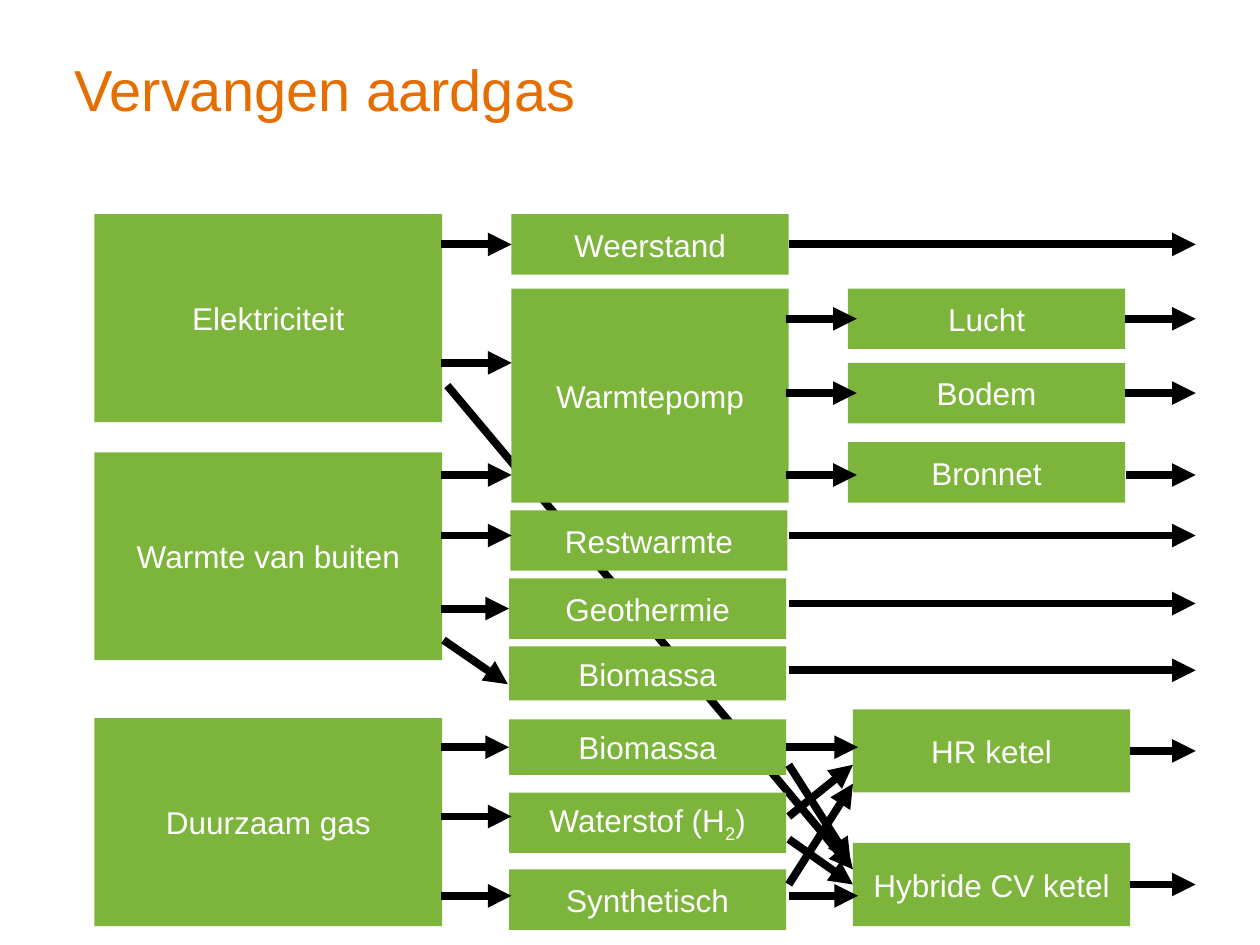
from dataclasses import dataclass

from lxml.etree import SubElement
from pptx import Presentation
from pptx.dml.color import RGBColor
from pptx.enum.shapes import MSO_CONNECTOR as Connector, MSO_SHAPE as Shape
from pptx.enum.text import MSO_ANCHOR as Anchor, MSO_AUTO_SIZE as AutoSize, PP_ALIGN as Align
from pptx.oxml.ns import qn
from pptx.util import Inches, Pt


@dataclass(frozen=True)
class Theme:
    font: str = "Arial"
    title_size: float = 33
    title_spacing: float = 28
    box_size: float = 18
    line_width: float = 4.5
    title: RGBColor = RGBColor(0xE6, 0x6E, 0x00)
    box: RGBColor = RGBColor(0x7D, 0xB4, 0x3C)
    box_text: RGBColor = RGBColor(0xFF, 0xFF, 0xFF)
    line: RGBColor = RGBColor(0x00, 0x00, 0x00)


class Diagram:
    def __init__(self, slide, theme):
        self.slide = slide
        self.theme = theme

    def run(self, paragraph, text, size, color):
        run = paragraph.add_run()
        run.text = text
        run.font.name = self.theme.font
        run.font.size = Pt(size)
        run.font.color.rgb = color
        return run

    def title(self, text, left, top, width, height):
        shape = self.slide.shapes.title
        shape.left, shape.top = Inches(left), Inches(top)
        shape.width, shape.height = Inches(width), Inches(height)
        frame = shape.text_frame
        frame.margin_left = frame.margin_right = frame.margin_top = frame.margin_bottom = 0
        frame.auto_size = AutoSize.NONE
        frame.vertical_anchor = Anchor.TOP
        paragraph = frame.paragraphs[0]
        paragraph.alignment = Align.LEFT
        paragraph.line_spacing = Pt(self.theme.title_spacing)
        self.run(paragraph, text, self.theme.title_size, self.theme.title)

    def box(self, parts, left, top, width, height):
        shape = self.slide.shapes.add_shape(
            Shape.RECTANGLE, Inches(left), Inches(top), Inches(width), Inches(height))
        shape.shadow.inherit = False
        shape.fill.solid()
        shape.fill.fore_color.rgb = self.theme.box
        shape.line.fill.background()
        frame = shape.text_frame
        frame.word_wrap = True
        frame.vertical_anchor = Anchor.MIDDLE
        paragraph = frame.paragraphs[0]
        paragraph.alignment = Align.CENTER
        for index, text in enumerate(parts):
            run = self.run(paragraph, text, self.theme.box_size, self.theme.box_text)
            if index % 2:
                run.font._element.set("baseline", "-25000")
        return shape

    def arrow(self, x1, y1, x2, y2, source=None, target=None):
        connector = self.slide.shapes.add_connector(
            Connector.STRAIGHT, Inches(x1), Inches(y1), Inches(x2), Inches(y2))
        connector.line.color.rgb = self.theme.line
        connector.line.width = Pt(self.theme.line_width)
        SubElement(connector.line._get_or_add_ln(), qn("a:tailEnd"), type="triangle")
        SubElement(connector._element.spPr, qn("a:effectLst"))
        if source is not None:
            connector.begin_connect(source, 3)
        if target is not None:
            connector.end_connect(target, 1)


SOURCES = [("Elektriciteit", 1.7), ("Warmte van buiten", 3.59), ("Duurzaam gas", 5.7)]
SOURCE_LEFT, SOURCE_WIDTH, SOURCE_HEIGHT = 0.75, 2.76, 1.65
BOX_WIDTH, BOX_HEIGHT = 2.2, 0.48
SOURCE_EDGE, TECHNIQUE_LEFT, TECHNIQUE_EDGE = 3.5, 4.06, 6.26
HEAT_EDGE, HEAT_TIP, DEVICE_EDGE, OUTPUT_TIP = 6.24, 6.8, 8.94, 9.49
BOILER_LEFT, BOILER_TIP = 6.77, 6.81

BOXES = {
    "resistance": (["Weerstand"], 4.06, 1.7, BOX_HEIGHT),
    "heat pump": (["Warmtepomp"], 4.06, 2.29, 1.7),
    "residual": (["Restwarmte"], 4.05, 4.05, BOX_HEIGHT),
    "geothermal": (["Geothermie"], 4.04, 4.59, BOX_HEIGHT),
    "biomass heat": (["Biomassa"], 4.04, 5.13, 0.43),
    "biomass gas": (["Biomassa"], 4.04, 5.71, 0.44),
    "hydrogen": (["Waterstof (H", "2", ")"], 4.04, 6.29, BOX_HEIGHT),
    "synthetic": (["Synthetisch"], 4.04, 6.9, BOX_HEIGHT),
    "air": (["Lucht"], 6.73, 2.29, BOX_HEIGHT),
    "soil": (["Bodem"], 6.73, 2.88, BOX_HEIGHT),
    "source net": (["Bronnet"], 6.73, 3.51, BOX_HEIGHT),
    "boiler": (["HR ketel"], BOILER_LEFT, 5.63, 0.66),
    "hybrid": (["Hybride CV ketel"], BOILER_LEFT, 6.69, 0.66),
}
INPUTS = [(1.94, "resistance"), (2.88, None), (3.77, None), (4.25, None),
          (4.83, "geothermal"), (5.93, "biomass gas"), (6.48, None), (7.11, None)]
LONG_OUTPUTS = [(1.94, "resistance"), (4.25, None), (4.79, None), (5.32, None)]
HEAT_INPUTS = [2.53, 3.12, 3.77]
DEVICE_OUTPUTS = [(2.53, "air"), (3.12, "soil"), (3.77, None), (5.96, "boiler"), (7.02, "hybrid")]
BOILER_INPUTS = [(5.93, "biomass gas"), (7.11, None)]
CROSSINGS = [
    (3.52, 5.08, 4.03, 5.43),
    (TECHNIQUE_EDGE, 6.48, BOILER_LEFT, 6.07),
    (TECHNIQUE_EDGE, 7.02, BOILER_LEFT, 6.22),
    (TECHNIQUE_EDGE, 6.66, BOILER_LEFT, 7.02),
    (TECHNIQUE_EDGE, 6.07, 6.75, 6.84),
]


def main():
    presentation = Presentation()
    presentation.slide_width, presentation.slide_height = Inches(10), Inches(7.5)
    slide = presentation.slides.add_slide(presentation.slide_layouts[5])
    diagram = Diagram(slide, Theme())
    diagram.title("Vervangen aardgas", 0.59, 0.59, 5.91, 0.39)

    for text, top in SOURCES:
        diagram.box([text], SOURCE_LEFT, top, SOURCE_WIDTH, SOURCE_HEIGHT)
    diagram.arrow(3.55, 3.06, BOILER_LEFT, 6.9)
    boxes = {name: diagram.box(parts, left, top, BOX_WIDTH, height)
             for name, (parts, left, top, height) in BOXES.items()}

    for y, name in INPUTS:
        diagram.arrow(SOURCE_EDGE, y, TECHNIQUE_LEFT, y, target=boxes.get(name))
    for y in HEAT_INPUTS:
        diagram.arrow(HEAT_EDGE, y, HEAT_TIP, y)
    for start, tip, rows in [(TECHNIQUE_EDGE, OUTPUT_TIP, LONG_OUTPUTS),
                             (TECHNIQUE_EDGE, BOILER_TIP, BOILER_INPUTS),
                             (DEVICE_EDGE, OUTPUT_TIP, DEVICE_OUTPUTS)]:
        for y, name in rows:
            diagram.arrow(start, y, tip, y, source=boxes.get(name))
    for ends in CROSSINGS:
        diagram.arrow(*ends)

    presentation.save("out.pptx")


if __name__ == "__main__":
    main()
